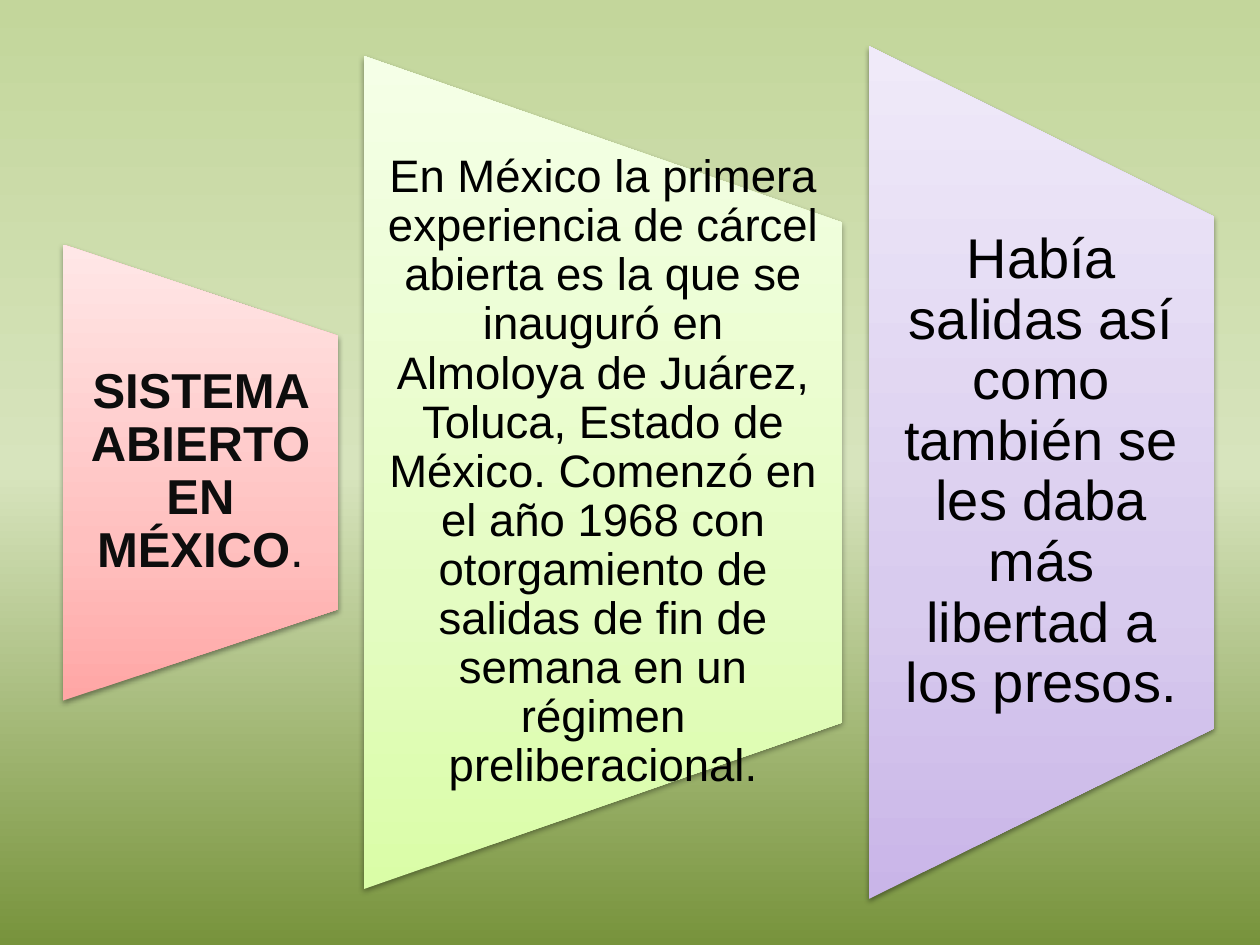
from pptx import Presentation
from pptx.dml.color import RGBColor
from pptx.enum.shapes import MSO_SHAPE
from pptx.enum.text import MSO_ANCHOR, PP_ALIGN
from pptx.oxml import parse_xml
from pptx.oxml.ns import nsdecls, qn
from pptx.util import Pt

TRAPEZOID = MSO_SHAPE.FLOWCHART_MANUAL_OPERATION
CENTER = PP_ALIGN.CENTER
MIDDLE = MSO_ANCHOR.MIDDLE
WIDE, HIGH = 720, 540
LEFT, GAP = 36, 15

# Per panel: width, height, side inset, text size, gradient colours, runs
PANELS = [
    (157, 260.6, 13.7, 28, ("FFA6A5", "FFC0BF", "FFE7E7"),
     [("SISTEMA ABIERTO EN MÉXICO", "0D0D0D", True), (".", "0D0D0D", False)]),
    (273.5, 476, 13, 26, ("DAFDA7", "E4FCC2", "F5FFE7"),
     [("En México la primera experiencia de cárcel abierta es la que se "
       "inauguró en Almoloya de Juárez, Toluca, Estado de México. Comenzó "
       "en el año 1968 con otorgamiento de salidas de fin de semana en un "
       "régimen preliberacional.", "000000", False)]),
    (197.3, 487.4, 15.8, 32, ("C9B5E8", "D8CBEE", "F0EAF9"),
     [("Había salidas así como también se les daba más libertad a los "
       "presos.", "000000", False)]),
]


def color(code):
    return RGBColor.from_string(code)


def apply(item, values):
    for name, value in values.items():
        setattr(item, name, value)


class Deck:
    font = "Arial"

    def __init__(self):
        self.file = Presentation()
        apply(self.file, {"slide_width": Pt(WIDE), "slide_height": Pt(HIGH)})
        self.slide = self.file.slides.add_slide(self.file.slide_layouts[6])
        self.group = self.slide.shapes.add_group_shape()

    def shade(self, owner, root, stops, angle):
        """Give the owner a linear gradient that stays upright when turned."""
        owner.fill.gradient()
        old = next(root.iter(qn("a:gradFill")))
        marks = "".join(
            f'<a:gs pos="{pos * 1000}"><a:srgbClr val="{code}"/></a:gs>'
            for pos, code in stops)
        old.getparent().replace(old, parse_xml(
            f'<a:gradFill {nsdecls("a")} rotWithShape="0">'
            f'<a:gsLst>{marks}</a:gsLst>'
            f'<a:lin ang="{angle * 60000}" scaled="0"/></a:gradFill>'))

    def backdrop(self, stops):
        self.shade(self.slide.background, self.slide.element, stops, 90)

    def shadow(self, shape):
        shape.shadow.inherit = False
        shape.element.spPr.find(qn("a:effectLst")).append(parse_xml(
            f'<a:outerShdw {nsdecls("a")} blurRad="{Pt(3.1)}" '
            f'dist="{Pt(1.6)}" dir="5400000" rotWithShape="0">'
            '<a:srgbClr val="000000"><a:alpha val="38000"/></a:srgbClr>'
            '</a:outerShdw>'))

    def panel(self, left, width, height, codes):
        # The box is laid flat around the same centre, then turned upright
        shape = self.group.shapes.add_shape(
            TRAPEZOID, Pt(left + (width - height) / 2),
            Pt((HIGH - width) / 2), Pt(height), Pt(width))
        shape.rotation = 270
        shape.line.fill.background()
        self.shade(shape, shape.element, zip((0, 35, 100), codes), 270)
        self.shadow(shape)

    def text(self, left, width, height, inset, size, runs):
        box = self.group.shapes.add_textbox(
            Pt(left), Pt((HIGH - height) / 2), Pt(width), Pt(height))
        frame = box.text_frame
        apply(frame, {"word_wrap": True, "vertical_anchor": MIDDLE,
                      "margin_left": Pt(inset), "margin_right": Pt(inset),
                      "margin_top": 0, "margin_bottom": 0})
        para = frame.paragraphs[0]
        apply(para, {"alignment": CENTER, "line_spacing": 0.9,
                     "space_after": Pt(0.35 * size)})
        for words, code, bold in runs:
            run = para.add_run()
            run.text = words
            apply(run.font, {"name": self.font, "size": Pt(size),
                             "bold": bold})
            run.font.color.rgb = color(code)


def main():
    deck = Deck()
    deck.backdrop([(0, "C3D69B"), (50, "D7E4BD"), (100, "77933C")])

    # Panels in a row, each centred on the slide's height
    left = LEFT
    for width, height, inset, size, codes, runs in PANELS:
        deck.panel(left, width, height, codes)
        deck.text(left, width, 0.6 * height, inset, size, runs)
        left += width + GAP

    deck.file.save("out.pptx")


if __name__ == "__main__":
    main()
